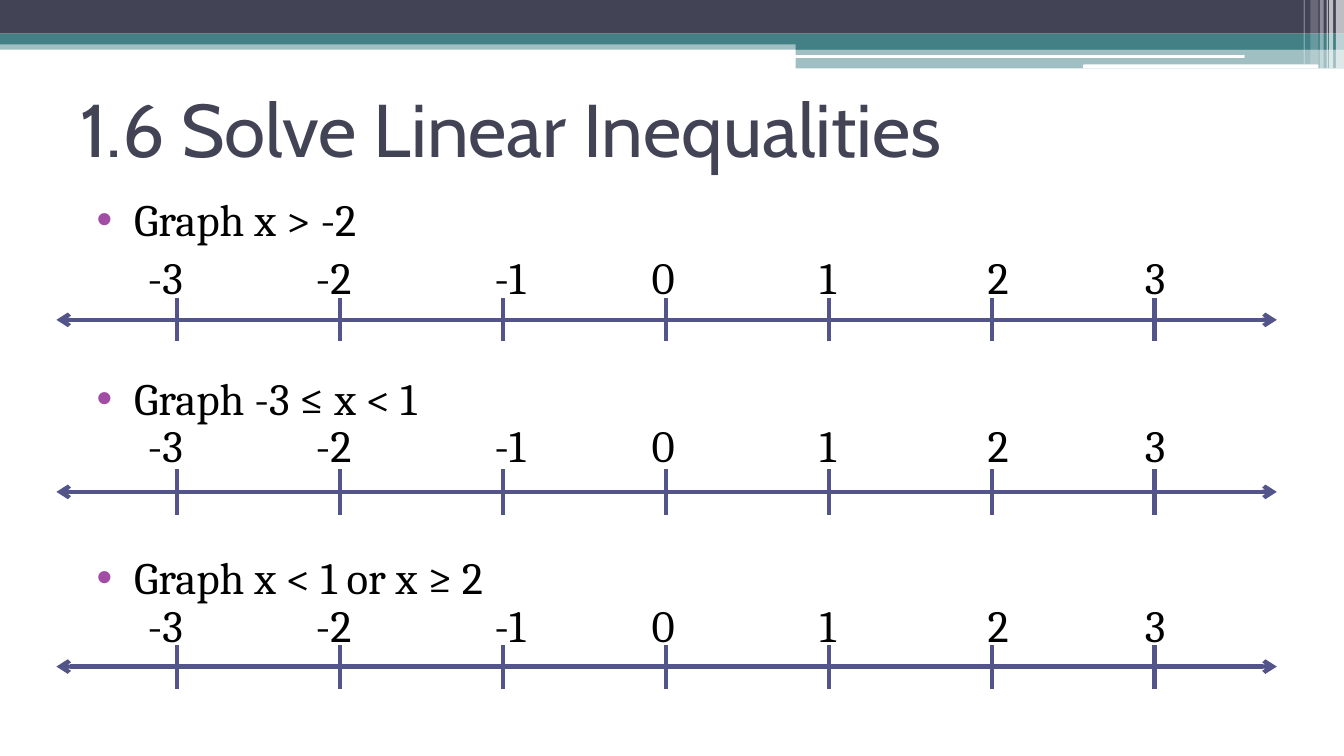
import pptx
import pptx.dml.color
import pptx.enum.shapes
import pptx.enum.text
import pptx.oxml
import pptx.oxml.ns
import pptx.util
from lxml import etree

SHAPE = pptx.enum.shapes.MSO_SHAPE
ANCHOR = pptx.enum.text.MSO_ANCHOR
SCALE = 9144  # EMU per px, 100 px to the inch
SLIDE_WIDTH = 1000
SLIDE_HEIGHT = SLIDE_WIDTH * 9 / 16
COLORS = {"navy": "424456", "teal": "438086", "white": "FFFFFF",
          "axis": "53548A", "bullet": "A04DA3", "text": "000000"}

TITLE = "1.6 Solve Linear Inequalities"
PROBLEMS = ["Graph x > -2", "Graph -3 ≤ x < 1", "Graph x < 1 or x ≥ 2"]

# left, top, width, height, colour, opacity in percent
BANDS = [
    (0, 30, 1000, 7, "teal", 50),
    (0, 0, 1000, 25, "navy", 100),
    (0, 25, 1000, 8, "teal", 100),
    (592, 30, 408, 7, "teal", 100),
    (592, 36, 408, 15, "teal", 50),
]
SLITS = [(591, 41, 335, 2, "white", 100), (806, 48, 175, 3, "white", 100)]
STRIPES = [
    (994, 0, 6, 51, "white", 65),
    (989, 0, 3, 51, "white", 65),
    (987, 0, 1, 51, "white", 60),
    (982, 0, 3, 51, "white", 40),
    (975, 0, 6, 48, "white", 20),
    (970, 0, 1, 48, "white", 30),
]

# label, left and width of its box
LABELS = [("-3", 100, 58), ("-2", 225, 54), ("-1", 358, 50), ("0", 475, 48),
          ("1", 600, 44), ("2", 725, 39), ("3", 842, 43)]
# axis height, top and bottom of the ticks, top and height of the label boxes
NUMBER_LINES = [(238, 222, 254, 181, 65),
                (366, 349, 383, 306, 69),
                (496, 480, 513, 440, 65)]
AXIS_LEFT, AXIS_RIGHT = 42, 950
FIRST_TICK, LAST_TICK = 132, 859


def px(value):
    return pptx.util.Emu(round(value * SCALE))


def rgb(name):
    return pptx.dml.color.RGBColor.from_string(COLORS[name])


def add_bar(shapes, kind, left, top, width, height, color, opacity):
    shape = shapes.add_shape(kind, px(left), px(top), px(width), px(height))
    shape.shadow.inherit = False
    shape.line.fill.background()
    shape.fill.solid()
    shape.fill.fore_color.rgb = rgb(color)
    if opacity < 100:
        fill_color = shape.fill._xPr.find(".//" + pptx.oxml.ns.qn("a:srgbClr"))
        etree.SubElement(fill_color, pptx.oxml.ns.qn("a:alpha"), val=str(opacity * 1000))


def add_text(shapes, lines, left, top, width, height, font="Cambria", size=24,
             color="text", anchor=ANCHOR.TOP, bullet=None, gaps=None):
    """Add a text box with one paragraph per line; gaps are points before each."""
    box = shapes.add_textbox(px(left), px(top), px(width), px(height))
    frame = box.text_frame
    frame.word_wrap = True
    frame.vertical_anchor = anchor
    for index, line in enumerate(lines):
        paragraph = frame.paragraphs[0] if index == 0 else frame.add_paragraph()
        run = paragraph.add_run()
        run.text = line
        run.font.name = font
        run.font.size = pptx.util.Pt(size)
        run.font.color.rgb = rgb(color)
        if gaps:
            paragraph.space_before = pptx.util.Pt(gaps[index])
        if bullet:
            properties = paragraph._p.get_or_add_pPr()
            properties.set("marL", str(px(40)))
            properties.set("indent", str(px(-28)))
            bullet_color = etree.SubElement(properties, pptx.oxml.ns.qn("a:buClr"))
            etree.SubElement(bullet_color, pptx.oxml.ns.qn("a:srgbClr"), val=COLORS["bullet"])
            etree.SubElement(properties, pptx.oxml.ns.qn("a:buFont"), typeface="Arial")
            etree.SubElement(properties, pptx.oxml.ns.qn("a:buChar"), char=bullet)


def add_line(shapes, x1, y1, x2, y2, arrows=False):
    line = shapes.add_connector(pptx.enum.shapes.MSO_CONNECTOR.STRAIGHT,
                                px(x1), px(y1), px(x2), px(y2))
    line.line.color.rgb = rgb("axis")
    line.line.width = pptx.util.Pt(2.25)
    if arrows:
        for end in ("a:headEnd", "a:tailEnd"):
            etree.SubElement(line.line._ln, pptx.oxml.ns.qn(end), type="arrow")
    etree.SubElement(line._element.spPr, pptx.oxml.ns.qn("a:effectLst"))


def add_number_line(slide, axis, tick_top, tick_bottom, label_top, label_height):
    shapes = slide.shapes.add_group_shape().shapes
    add_line(shapes, AXIS_LEFT, axis, AXIS_RIGHT, axis, arrows=True)
    step = (LAST_TICK - FIRST_TICK) / (len(LABELS) - 1)
    for index, (label, left, width) in enumerate(LABELS):
        tick = FIRST_TICK + index * step
        add_line(shapes, tick, tick_top, tick, tick_bottom)
        add_text(shapes, [label], left, label_top, width, label_height)


def main():
    presentation = pptx.Presentation()
    presentation.slide_width = px(SLIDE_WIDTH)
    presentation.slide_height = px(SLIDE_HEIGHT)
    slide = presentation.slides.add_slide(presentation.slide_layouts[6])
    for kind, bars in ((SHAPE.RECTANGLE, BANDS), (SHAPE.ROUNDED_RECTANGLE, SLITS),
                       (SHAPE.RECTANGLE, STRIPES)):
        for bar in bars:
            add_bar(slide.shapes, kind, *bar)
    add_text(slide.shapes, [TITLE], 50, 51, 900, 88, font="Cabin", size=40,
             color="navy", anchor=ANCHOR.MIDDLE)
    add_text(slide.shapes, PROBLEMS, 50, 138, 900, 400, bullet="•", gaps=[3, 67, 67])
    for number_line in NUMBER_LINES:
        add_number_line(slide, *number_line)
    presentation.save("out.pptx")


if __name__ == "__main__":
    main()
